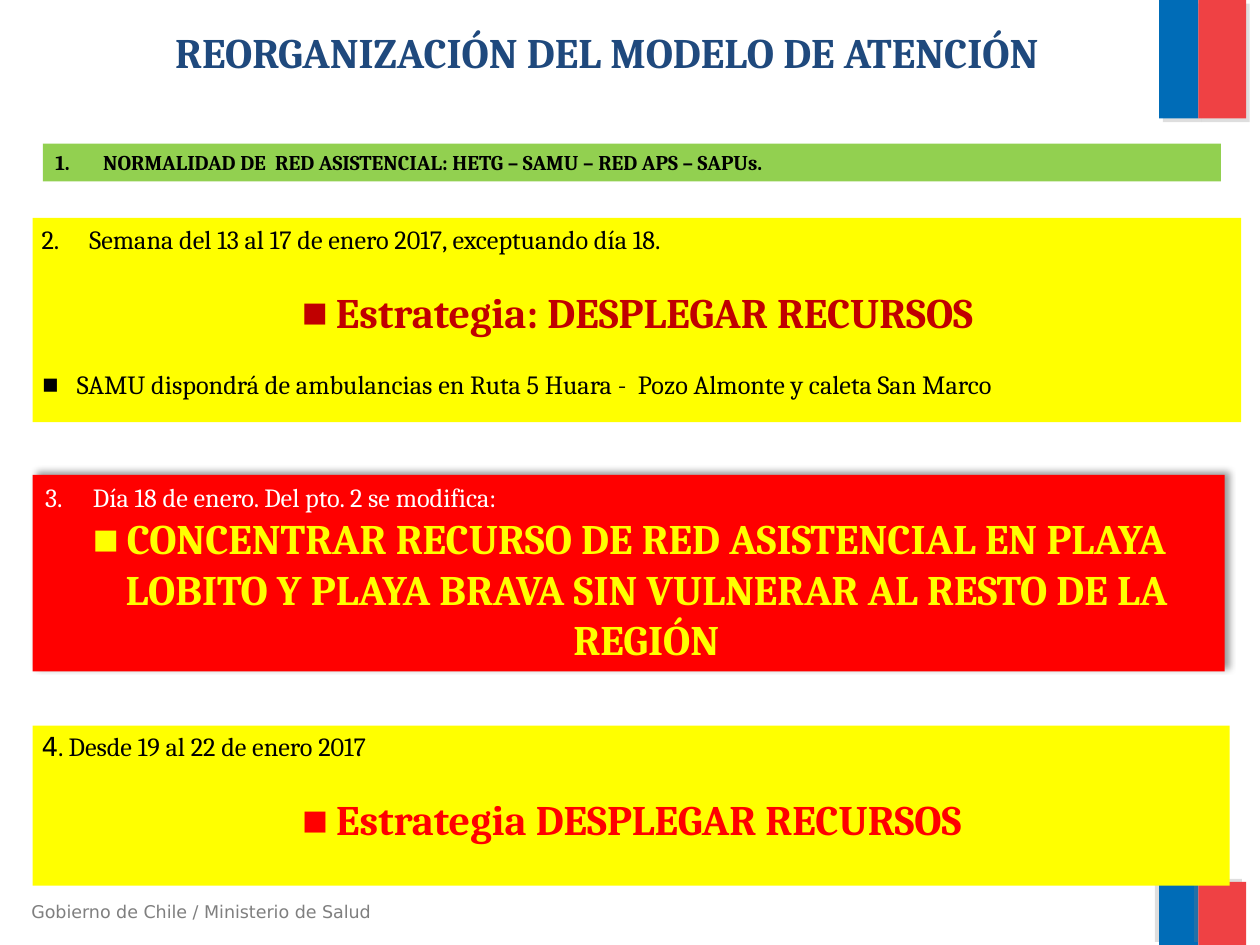
from dataclasses import dataclass
from lxml.etree import SubElement as Sub
from pptx import Presentation as Deck
from pptx.dml.color import RGBColor as Rgb
from pptx.enum.shapes import MSO_SHAPE as Kind
from pptx.enum.text import MSO_ANCHOR as Anchor, MSO_AUTO_SIZE as Fit, PP_ALIGN as Align
from pptx.oxml.ns import qn
from pptx.util import Inches, Pt


@dataclass(frozen=True)
class Theme:
    """Colours, fonts and type sizes of the slide."""
    blue: str = "006CB7"
    coral: str = "EF4144"
    navy: str = "1F497D"
    green: str = "92D050"
    yellow: str = "FFFF00"
    red: str = "FF0000"
    wine: str = "C00000"
    black: str = "000000"
    white: str = "FFFFFF"
    gray: str = "7F7F7F"
    shade: str = "808080"
    serif: str = "Cambria"
    sans: str = "DejaVu Sans"
    big: int = 24
    mid: int = 15
    small: int = 12
    tiny: int = 10
    gap: int = 18


T = Theme()
COLS, ROWS = 100, 75
WIDE, HIGH = Inches(10), Inches(7.5)


def apply(obj, vals):
    """Set each attribute of an object from a dict."""
    for key, val in vals.items():
        setattr(obj, key, val)


def place(box):
    """Turn a box in grid columns and rows into slide lengths."""
    x, y, w, h = box
    return (int(x * WIDE / COLS), int(y * HIGH / ROWS),
            int(w * WIDE / COLS), int(h * HIGH / ROWS))


def cast(shape, color, alpha, blur, dist, angle):
    """Give a shape an outer shadow."""
    glow = Sub(shape._element.spPr.find(qn("a:effectLst")), qn("a:outerShdw"),
               blurRad=str(Pt(blur)), dist=str(Pt(dist)), dir=str(angle * 60000),
               algn="ctr", rotWithShape="0")
    tint = Sub(glow, qn("a:srgbClr"), val=color)
    Sub(tint, qn("a:alpha"), val=str(alpha * 1000))


def block(slide, box, color, shadow=None):
    """Add a plain filled rectangle."""
    shape = slide.shapes.add_shape(Kind.RECTANGLE, *place(box))
    shape.shadow.inherit = False
    shape.fill.solid()
    shape.fill.fore_color.rgb = Rgb.from_string(color)
    shape.line.fill.background()
    if shadow:
        cast(shape, *shadow)
    return shape


def frame(shape, pad=(0.1, 0.05)):
    """Prepare a text frame with side and top margins in inches."""
    text = shape.text_frame
    side, top = map(Inches, pad)
    apply(text, dict(word_wrap=True, auto_size=Fit.NONE, vertical_anchor=Anchor.TOP,
                     margin_left=side, margin_right=side,
                     margin_top=top, margin_bottom=top))
    return text


def write(para, words, size, color, bold=False, font=T.serif):
    """Add one formatted run to a paragraph."""
    run = para.add_run()
    run.text = words
    apply(run.font, dict(name=font, size=Pt(size), bold=bold))
    run.font.color.rgb = Rgb.from_string(color)


def mark(para, num=None):
    """Hang a number, or a square bullet, before a paragraph."""
    props = para._p.get_or_add_pPr()
    hang = Inches(0.38 if num else 0.28)
    props.set("marL", str(hang))
    props.set("indent", str(-hang))
    if num:
        Sub(props, qn("a:buFont"), typeface="+mj-lt")
        Sub(props, qn("a:buAutoNum"), type="arabicPeriod", startAt=str(num))
    else:
        Sub(props, qn("a:buFont"), typeface=T.sans)
        Sub(props, qn("a:buChar"), char="▪")


def lead(text, num, words, color, size=T.mid, bold=False):
    """Write the numbered first line of a panel."""
    para = text.paragraphs[0]
    para.alignment = Align.LEFT
    mark(para, num)
    write(para, words, size, color, bold)


def point(text, words, color, size=T.big, bold=True, align=Align.CENTER, gap=T.gap):
    """Add a bulleted line below a gap."""
    para = text.add_paragraph()
    apply(para, dict(alignment=align, space_before=Pt(gap)))
    mark(para)
    write(para, words, size, color, bold)


def flag(slide, box, angle):
    """Draw the two-colour band of a corner."""
    x, y, w, h = box
    split = w * 0.45
    shadow = (T.shade, 25, 0, 3, angle)
    block(slide, (x, y, split, h), T.blue, shadow)
    block(slide, (x + split, y, w - split, h), T.coral, shadow)


def head(slide, box):
    """Place and format the title."""
    title = slide.shapes.title
    apply(title, dict(zip(("left", "top", "width", "height"), place(box))))
    para = frame(title).paragraphs[0]
    para.alignment = Align.CENTER
    write(para, "REORGANIZACIÓN DEL MODELO DE ATENCIÓN", T.big, T.navy, True)


def foot(slide, box):
    """Write the footer line."""
    text = frame(slide.shapes.add_textbox(*place(box)))
    write(text.paragraphs[0], "Gobierno de Chile / Ministerio de Salud",
          T.tiny, T.gray, font=T.sans)


def normal(slide, box):
    """Build the green strip of step one."""
    lead(frame(block(slide, box, T.green)), 1,
         "NORMALIDAD DE  RED ASISTENCIAL: HETG – SAMU – RED APS – SAPUs.",
         T.black, T.small, True)


def deploy(slide, box):
    """Build the yellow panel of step two."""
    text = frame(block(slide, box, T.yellow), (0.07, 0.04))
    lead(text, 2, "Semana del 13 al 17 de enero 2017, exceptuando día 18.", T.black)
    point(text, "Estrategia: DESPLEGAR RECURSOS", T.wine)
    point(text, "SAMU dispondrá de ambulancias en Ruta 5 Huara -  Pozo Almonte "
          "y caleta San Marco", T.black, T.mid, False, Align.LEFT)


def focus(slide, box):
    """Build the red panel of step three."""
    text = frame(block(slide, box, T.red, (T.black, 40, 4, 3, 315)))
    lead(text, 3, "Día 18 de enero. Del pto. 2 se modifica:", T.white)
    point(text, "CONCENTRAR RECURSO DE RED ASISTENCIAL EN PLAYA LOBITO Y PLAYA BRAVA "
          "SIN VULNERAR AL RESTO DE LA REGIÓN", T.yellow, gap=0)


def close(slide, box):
    """Build the yellow panel of step four."""
    text = frame(block(slide, box, T.yellow), (0.07, 0.04))
    para = text.paragraphs[0]
    para.alignment = Align.LEFT
    write(para, "4", T.mid, T.black, font=T.sans)
    write(para, ". Desde 19 al 22 de enero 2017", T.mid, T.black)
    point(text, "Estrategia DESPLEGAR RECURSOS", T.red)


def main():
    """Build the slide and save it."""
    deck = Deck()
    apply(deck, dict(slide_width=WIDE, slide_height=HIGH))
    slide = deck.slides.add_slide(deck.slide_layouts[5])
    flag(slide, (92, 0, 6.9, 9.4), 45)
    flag(slide, (92, 70, 6.9, 5), 215)
    foot(slide, (1.5, 71, 30.2, 2.7))
    head(slide, (3.5, 1.6, 89.3, 8.9))
    normal(slide, (3.4, 11.4, 93.5, 3))
    deploy(slide, (2.6, 17.3, 95.9, 16.2))
    focus(slide, (2.6, 37.7, 94.6, 15.6))
    close(slide, (2.6, 57.6, 95, 12.7))
    deck.save("out.pptx")


if __name__ == "__main__":
    main()
